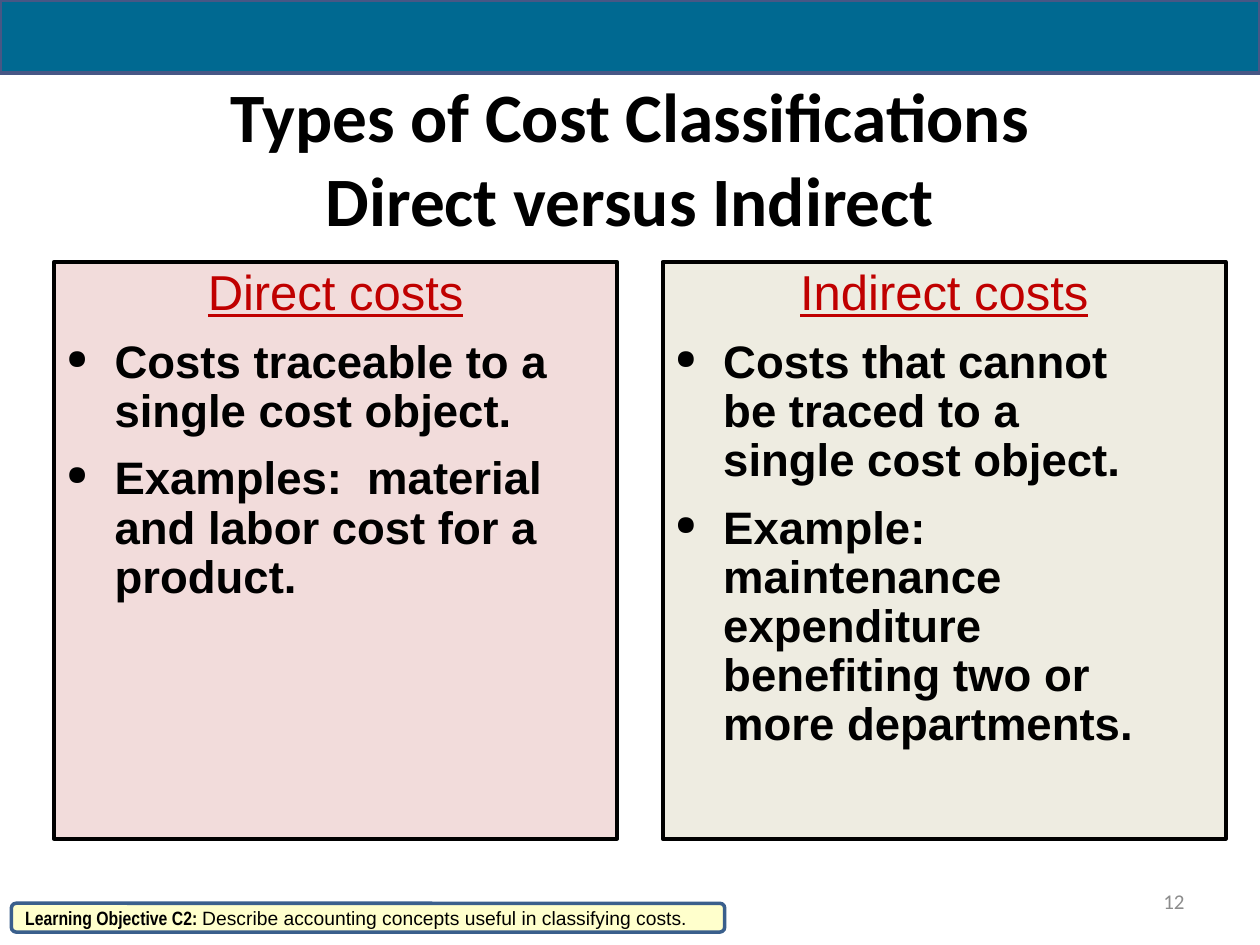
"""Builds a slide that sets direct costs beside indirect costs."""
from lxml import etree
from pptx import Presentation
from pptx import util as u
from pptx.dml.color import RGBColor
from pptx.enum import shapes, text
from pptx.oxml.ns import qn

COLOURS = {
    "bar": "006991", "bar_line": "475785",
    "direct": "F2DCDB", "indirect": "EEECE1",
    "heading": "C00000", "ink": "000000", "number": "8C8C8C",
    "objective": "FFFFCC", "objective_line": "3A5F8C",
}
COSTS = [
    ("direct", "Direct costs", [
        "Costs traceable to a single cost object.",
        "Examples:  material and labor cost for a product.",
    ]),
    ("indirect", "Indirect costs", [
        "Costs that cannot\vbe traced to a\vsingle cost object.",
        "Example:\vmaintenance expenditure\vbenefiting two or\vmore departments.",
    ]),
]
PANEL_LEFT, PANEL_STEP = 1.09, 12.27
INDENT = u.Cm(0.97)


def colour(name):
    """Return the named colour."""
    return RGBColor.from_string(COLOURS[name])


def set_font(font, name, size, ink="ink", bold=False):
    """Set the face, size, colour and weight of a font."""
    font.name, font.size, font.bold = name, u.Pt(size), bold
    font.color.rgb = colour(ink)


def add_box(page, kind, place, fill, line, width):
    """Add a filled, outlined shape."""
    box = page.shapes.add_shape(kind, *map(u.Cm, place))
    box.shadow.inherit = False
    box.fill.solid()
    box.fill.fore_color.rgb = colour(fill)
    box.line.color.rgb = colour(line)
    box.line.width = u.Pt(width)
    return box


def add_text(page, place, words, align):
    """Add a wrapped, vertically centred text box and return its paragraph."""
    frame = page.shapes.add_textbox(*map(u.Cm, place)).text_frame
    frame.word_wrap = True
    frame.vertical_anchor = text.MSO_ANCHOR.MIDDLE
    para = frame.paragraphs[0]
    para.text, para.alignment = words, align
    return para


def add_bullet(para):
    """Give a paragraph a hanging round bullet."""
    props = para._p.get_or_add_pPr()
    props.set("marL", str(INDENT))
    props.set("indent", str(-INDENT))
    etree.SubElement(props, qn("a:buSzPct"), val="60000")
    etree.SubElement(props, qn("a:buChar"), char="●")


def add_panel(page, left, fill, heading, points):
    """Add a panel with an underlined heading and bulleted points."""
    box = add_box(page, shapes.MSO_SHAPE.RECTANGLE, (left, 5.28, 11.35, 11.63), fill, "ink", 2.25)
    frame = box.text_frame
    frame.vertical_anchor = text.MSO_ANCHOR.TOP
    para = frame.paragraphs[0]
    para.text, para.alignment, para.line_spacing = heading, text.PP_ALIGN.CENTER, 0.9
    set_font(para.font, "Arial", 28, "heading")
    para.font.underline = True
    for point in points:
        para = frame.add_paragraph()
        para.text, para.alignment = point, text.PP_ALIGN.LEFT
        para.line_spacing, para.space_before = 0.9, u.Pt(10.4)
        set_font(para.font, "Arial", 26, bold=True)
        add_bullet(para)


def add_objective(page):
    """Add the rounded strip with the learning objective."""
    box = add_box(page, shapes.MSO_SHAPE.ROUNDED_RECTANGLE, (0.23, 18.21, 14.38, 0.58),
                  "objective", "objective_line", 2)
    para = box.text_frame.paragraphs[0]
    para.alignment = text.PP_ALIGN.LEFT
    for words, face, bold in [
        ("Learning Objective C2: ", "Arial Narrow", True),
        ("Describe accounting concepts useful in classifying costs.", "Arial", False),
    ]:
        span = para.add_run()
        span.text = words
        set_font(span.font, face, 11, bold=bold)


def main():
    """Build and save the deck."""
    deck = Presentation()
    deck.slide_width, deck.slide_height = u.Cm(25.4), u.Cm(19.05)
    page = deck.slides.add_slide(deck.slide_layouts[6])
    for index, (fill, heading, points) in enumerate(COSTS):
        add_panel(page, PANEL_LEFT + index * PANEL_STEP, fill, heading, points)
    title = add_text(page, (1.27, 1.47, 22.86, 3.38),
                     "Types of Cost Classifications\vDirect versus Indirect", text.PP_ALIGN.CENTER)
    set_font(title.font, "Calibri", 39.6, bold=True)
    add_box(page, shapes.MSO_SHAPE.RECTANGLE, (0, 0, 25.4, 1.47), "bar", "bar_line", 2.25)
    number = add_text(page, (18.21, 17.65, 5.92, 1.02), "12", text.PP_ALIGN.RIGHT)
    set_font(number.font, "Calibri", 12, "number")
    add_objective(page)
    deck.save("out.pptx")


if __name__ == "__main__":
    main()
